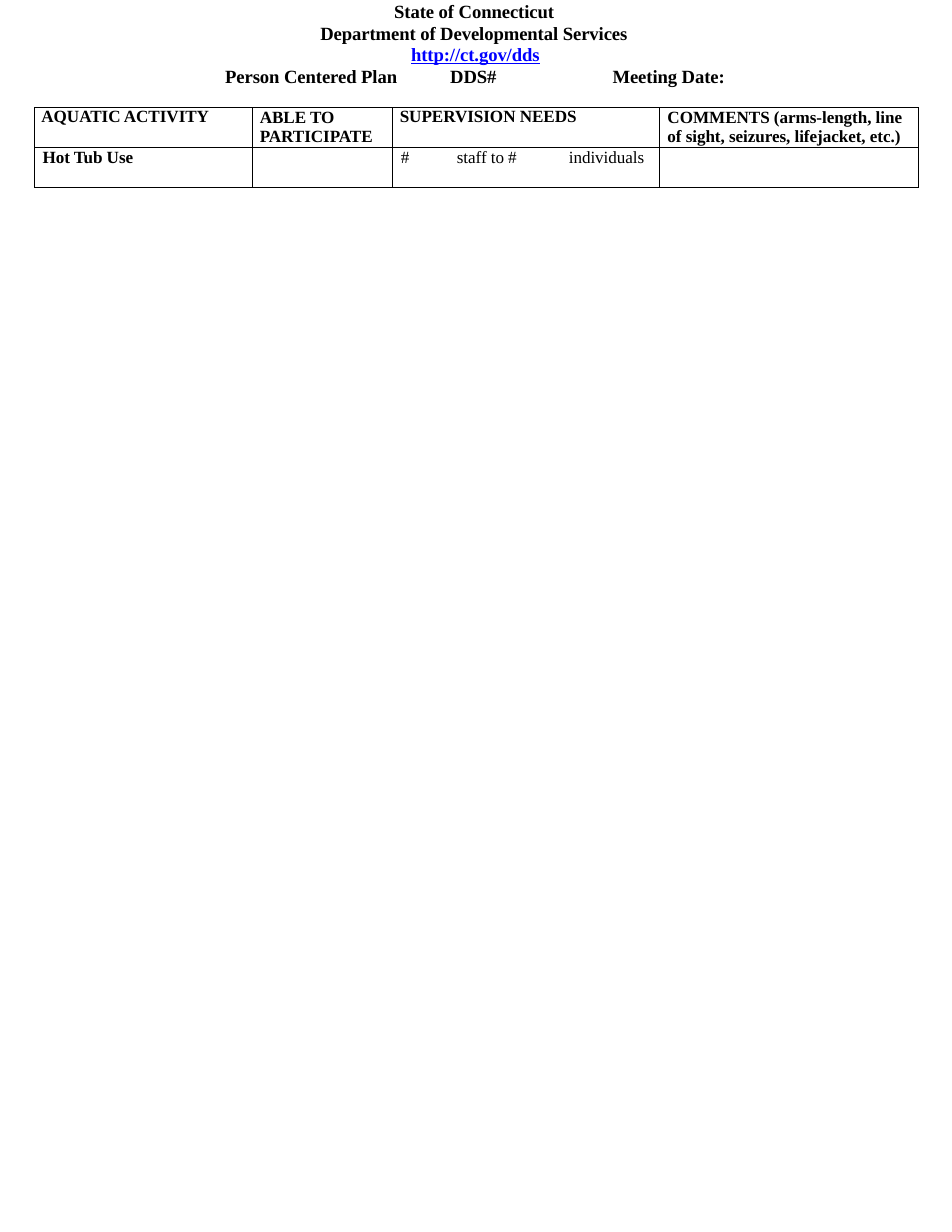
from lxml.etree import SubElement
from pptx import Presentation
from pptx.dml.color import RGBColor
from pptx.enum.text import MSO_ANCHOR, MSO_AUTO_SIZE, PP_ALIGN
from pptx.oxml.ns import qn
from pptx.util import Inches, Pt

BLACK = "000000"
LINK_BLUE = "0000FF"


def color(value):
    """Turn a hex string into a colour."""
    return RGBColor.from_string(value)


def write(paragraph, text, size=12, bold=True, ink=BLACK, underline=None,
          left=0.01, first=0, leading=None, tabs=()):
    """Put formatted text into a paragraph."""
    run = paragraph.add_run()
    run.text = text
    font = run.font
    font.name, font.size = "Times New Roman", Pt(size)
    font.bold, font.underline = bold, underline
    font.color.rgb = color(ink)
    run._r.get_or_add_rPr().set("spc", "-5")
    paragraph.alignment = PP_ALIGN.LEFT
    if leading:
        paragraph.line_spacing = Pt(leading)
    properties = paragraph._p.get_or_add_pPr()
    properties.set("marL", str(Inches(left)))
    properties.set("indent", str(Inches(first)))
    if tabs:
        stops = SubElement(properties, qn("a:tabLst"))
        for position in tabs:
            SubElement(stops, qn("a:tab"), pos=str(Inches(position)), algn="l")


def clear_margins(holder):
    """Remove the inner margins of a text frame or cell."""
    holder.margin_left = holder.margin_right = 0
    holder.margin_top = holder.margin_bottom = 0


def prepare_frame(frame):
    """Make a text frame wrap from its top left corner."""
    clear_margins(frame)
    frame.word_wrap = True
    frame.auto_size = MSO_AUTO_SIZE.NONE
    frame.vertical_anchor = MSO_ANCHOR.TOP


def add_heading(slide):
    """Fill the title with the department and its address."""
    heading = slide.shapes.title
    heading.left, heading.top = Inches(2.85), Inches(0.01)
    heading.width, heading.height = Inches(2.85), Inches(0.58)
    frame = heading.text_frame
    prepare_frame(frame)
    write(frame.paragraphs[0],
          "State of Connecticut Department of Developmental Services",
          first=0.66, leading=13.8)
    write(frame.add_paragraph(), "http://ct.gov/dds", ink=LINK_BLUE,
          underline=True, left=0.82, leading=13.4)


def add_plan_label(slide, text, left, width):
    """Add one label of the plan line."""
    label = slide.shapes.add_textbox(
        Inches(left), Inches(0.58), Inches(width), Inches(0.19))
    prepare_frame(label.text_frame)
    write(label.text_frame.paragraphs[0], text)


def outline_cell(cell):
    """Draw thin black borders around a cell."""
    properties = cell._tc.get_or_add_tcPr()
    for side in ("a:lnL", "a:lnR", "a:lnT", "a:lnB"):
        border = SubElement(properties, qn(side), w=str(Pt(0.58)))
        fill = SubElement(border, qn("a:solidFill"))
        SubElement(fill, qn("a:srgbClr"), val=BLACK)


def add_activity_table(slide):
    """Add the table of aquatic activities."""
    widths, heights = (1.94, 1.25, 2.39, 2.31), (0.36, 0.35)
    entries = (
        (("AQUATIC ACTIVITY", {"left": 0.06}),
         ("ABLE TO PARTICIPATE", {"leading": 12.6}),
         ("SUPERVISION NEEDS", {}),
         ("COMMENTS (arms-length, line of sight, seizures, lifejacket, etc.)",
          {"leading": 12.6})),
        (("Hot Tub Use", {}),
         ("", {}),
         ("#\tstaff to #\tindividuals",
          {"left": 0.08, "bold": False, "tabs": (0.62, 1.62)}),
         ("", {})),
    )
    table = slide.shapes.add_table(
        len(heights), len(widths), Inches(0.31), Inches(0.96),
        Inches(sum(widths)), Inches(sum(heights))).table
    table.first_row = table.horz_banding = False
    for column, width in zip(table.columns, widths):
        column.width = Inches(width)
    for row, height, row_entries in zip(table.rows, heights, entries):
        row.height = Inches(height)
        for cell, (text, layout) in zip(row.cells, row_entries):
            clear_margins(cell)
            outline_cell(cell)
            cell.fill.background()
            if text:
                write(cell.text_frame.paragraphs[0], text,
                      **{"size": 11, "left": 0.07, **layout})


def main():
    """Build the activity form."""
    form = Presentation()
    form.slide_width, form.slide_height = Inches(8.5), Inches(11)
    slide = form.slides.add_slide(form.slide_layouts[5])
    add_heading(slide)
    for text, left, width in (("Person Centered Plan", 2, 1.58),
                              ("DDS#", 4.01, 0.44),
                              ("Meeting Date:", 5.46, 1.04)):
        add_plan_label(slide, text, left, width)
    add_activity_table(slide)
    form.save("out.pptx")


if __name__ == "__main__":
    main()
